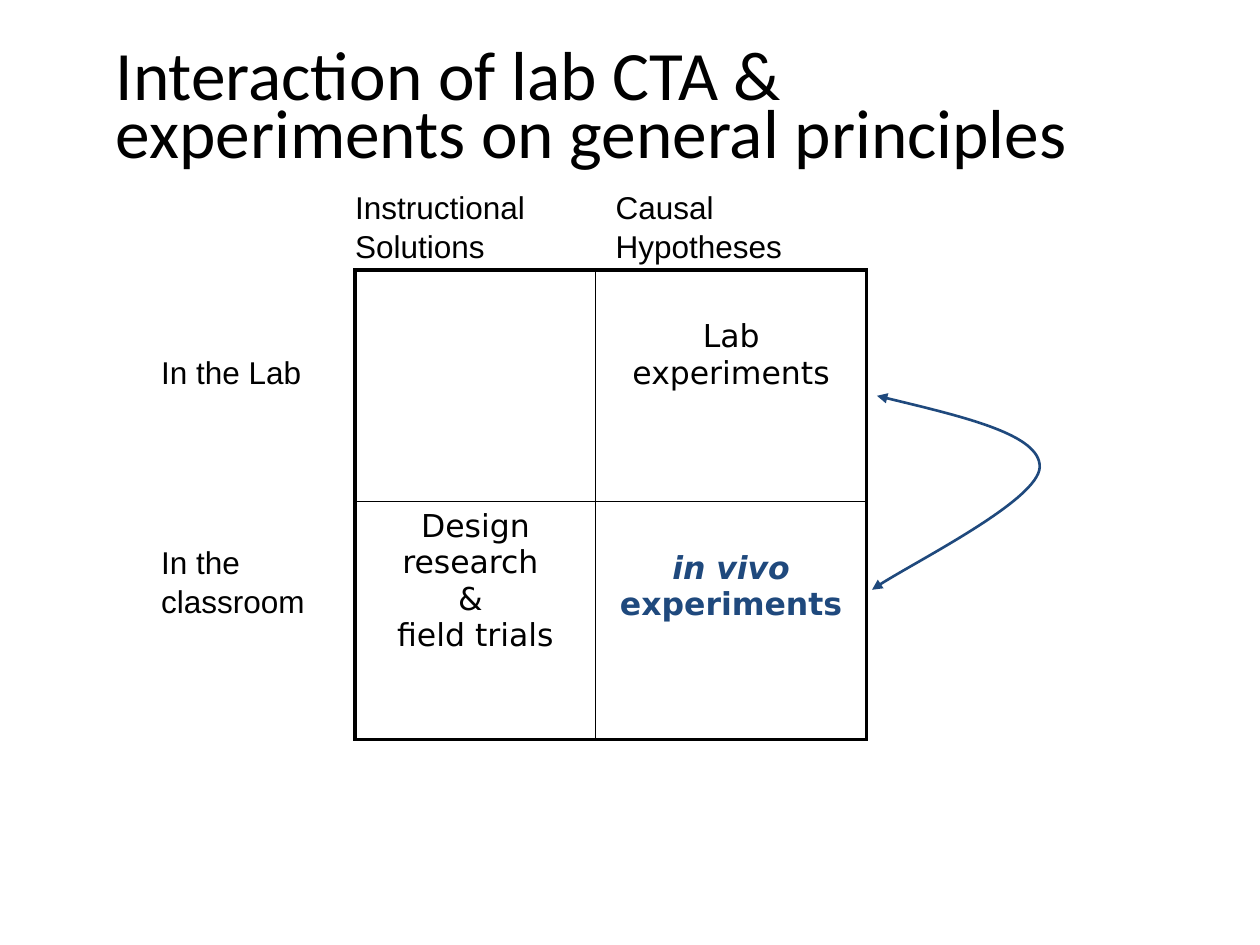
from dataclasses import dataclass

from lxml import etree
from pptx import Presentation
from pptx.dml.color import RGBColor
from pptx.enum.text import MSO_ANCHOR, MSO_AUTO_SIZE, PP_ALIGN
from pptx.oxml.ns import qn
from pptx.util import Cm, Pt

LEFT, CENTER = PP_ALIGN.LEFT, PP_ALIGN.CENTER
MIDDLE = MSO_ANCHOR.MIDDLE
NO_FIT, GROW = MSO_AUTO_SIZE.NONE, MSO_AUTO_SIZE.SHAPE_TO_FIT_TEXT
TITLE_ONLY = 5
COLORS = {"ink": "000000", "accent": "1F497D"}
THICK, THIN = 2.25, 1


@dataclass
class Label:
    """A text box with one paragraph per line; sizes in cm, gaps in points."""
    lines: tuple[str, ...]
    left: float
    top: float
    width: float
    height: float
    gap: float = 0
    tab: float = 0


@dataclass
class Quadrant:
    row: int
    column: int
    runs: tuple[str, ...] = ()
    top_margin: float = 0.13
    color: str = "ink"
    bold: bool = False


LABELS = (
    Label(("In the Lab", "In the classroom"), 3.0, 6.96, 4.37, 6.17, gap=86),
    Label(("Instructional\tCausal", "Solutions\tHypotheses"),
          6.91, 3.63, 10.64, 1.96, tab=5.25),
)
COLUMN_WIDTHS = (4.85, 5.46)
ROW_HEIGHTS = (4.67, 4.8)
QUADRANTS = (
    Quadrant(0, 0),
    Quadrant(0, 1, ("Lab experiments",), 0.98),
    Quadrant(1, 0, ("Design research \v& \vfield trials",)),
    Quadrant(1, 1, ("in vivo", " experiments"), 0.98, "accent", True),
)
# Start point, then two control points and an end point for each curve.
LOOP = ((17.68, 7.98), (19.33, 8.38), (20.98, 8.76), (20.96, 9.42),
        (20.93, 10.08), (18.14, 11.48), (17.58, 11.89))


def rgb(name: str) -> RGBColor:
    return RGBColor.from_string(COLORS[name])


def format_paragraph(para, font: str, size: float, align=LEFT,
                     color: str = "ink", bold: bool = False) -> None:
    para.alignment = align
    para.font.name = font
    para.font.size = Pt(size)
    para.font.bold = bold
    para.font.color.rgb = rgb(color)


def add_title(slide) -> None:
    title = slide.shapes.title
    title.left, title.top = Cm(2.08), Cm(0.66)
    title.width, title.height = Cm(21.59), Cm(3.18)
    frame = title.text_frame
    frame.auto_size = NO_FIT
    frame.vertical_anchor = MIDDLE
    para = frame.paragraphs[0]
    para.text = "Interaction of lab CTA &\vexperiments on general principles"
    para.line_spacing = 0.7
    format_paragraph(para, "Calibri", 39.6)


def add_tab_stop(para, position: float) -> None:
    properties = para._p.get_or_add_pPr()
    stops = etree.Element(qn("a:tabLst"))
    etree.SubElement(stops, qn("a:tab"), pos=str(Cm(position)), algn="l")
    properties.find(qn("a:defRPr")).addprevious(stops)


def add_label(slide, label: Label) -> None:
    box = slide.shapes.add_textbox(Cm(label.left), Cm(label.top),
                                   Cm(label.width), Cm(label.height))
    frame = box.text_frame
    frame.word_wrap = True
    frame.auto_size = GROW
    for index, line in enumerate(label.lines):
        para = frame.add_paragraph() if index else frame.paragraphs[0]
        para.text = line
        para.line_spacing = 1.04
        if index and label.gap:
            para.space_before = Pt(label.gap)
        format_paragraph(para, "Arial", 18)
        if label.tab:
            add_tab_stop(para, label.tab)


def set_borders(cell, row: int, column: int) -> None:
    """Draw thick lines round the table and thin ones inside it."""
    outer = {"lnL": column == 0, "lnR": column == len(COLUMN_WIDTHS) - 1,
             "lnT": row == 0, "lnB": row == len(ROW_HEIGHTS) - 1}
    properties = cell._tc.get_or_add_tcPr()
    for index, (side, is_outer) in enumerate(outer.items()):
        width = Pt(THICK if is_outer else THIN)
        line = etree.Element(qn(f"a:{side}"), w=str(width))
        fill = etree.SubElement(line, qn("a:solidFill"))
        etree.SubElement(fill, qn("a:srgbClr"), val=COLORS["ink"])
        properties.insert(index, line)


def fill_quadrant(table, quadrant: Quadrant) -> None:
    cell = table.cell(quadrant.row, quadrant.column)
    cell.fill.background()
    set_borders(cell, quadrant.row, quadrant.column)
    cell.margin_top = Cm(quadrant.top_margin)
    para = cell.text_frame.paragraphs[0]
    if len(quadrant.runs) == 1:
        para.text = quadrant.runs[0]
    else:
        for index, text in enumerate(quadrant.runs):
            run = para.add_run()
            run.text = text
            run.font.italic = index == 0
    format_paragraph(para, "DejaVu Sans", 18, CENTER,
                     quadrant.color, quadrant.bold)


def add_matrix(slide) -> None:
    frame = slide.shapes.add_table(
        len(ROW_HEIGHTS), len(COLUMN_WIDTHS), Cm(7.16), Cm(5.44),
        Cm(sum(COLUMN_WIDTHS)), Cm(sum(ROW_HEIGHTS)))
    table = frame.table
    table.first_row = table.horz_banding = False
    for column, width in zip(table.columns, COLUMN_WIDTHS):
        column.width = Cm(width)
    for row, height in zip(table.rows, ROW_HEIGHTS):
        row.height = Cm(height)
    for quadrant in QUADRANTS:
        fill_quadrant(table, quadrant)


def bend_segments(shape) -> None:
    """Merge each three straight segments into one cubic curve."""
    segments = list(shape._element.iter(qn("a:lnTo")))
    for start in range(0, len(segments), 3):
        curve = etree.Element(qn("a:cubicBezTo"))
        segments[start].addprevious(curve)
        for segment in segments[start:start + 3]:
            curve.append(segment[0])
            segment.getparent().remove(segment)


def add_loop_arrow(slide) -> None:
    points = [(Cm(x), Cm(y)) for x, y in LOOP]
    builder = slide.shapes.build_freeform(*points[0], scale=1.0)
    builder.add_line_segments(points[1:], close=False)
    arrow = builder.convert_to_shape()
    bend_segments(arrow)
    arrow.shadow.inherit = False
    arrow.fill.background()
    arrow.line.color.rgb = rgb("accent")
    arrow.line.width = Pt(1.5)
    line = arrow._element.spPr.find(qn("a:ln"))
    for end in ("headEnd", "tailEnd"):
        etree.SubElement(line, qn(f"a:{end}"), type="triangle")


def main() -> None:
    deck = Presentation()
    deck.slide_width, deck.slide_height = Cm(25.4), Cm(19.05)
    slide = deck.slides.add_slide(deck.slide_layouts[TITLE_ONLY])
    add_title(slide)
    add_matrix(slide)
    for label in LABELS:
        add_label(slide, label)
    add_loop_arrow(slide)
    deck.save("out.pptx")


if __name__ == "__main__":
    main()
